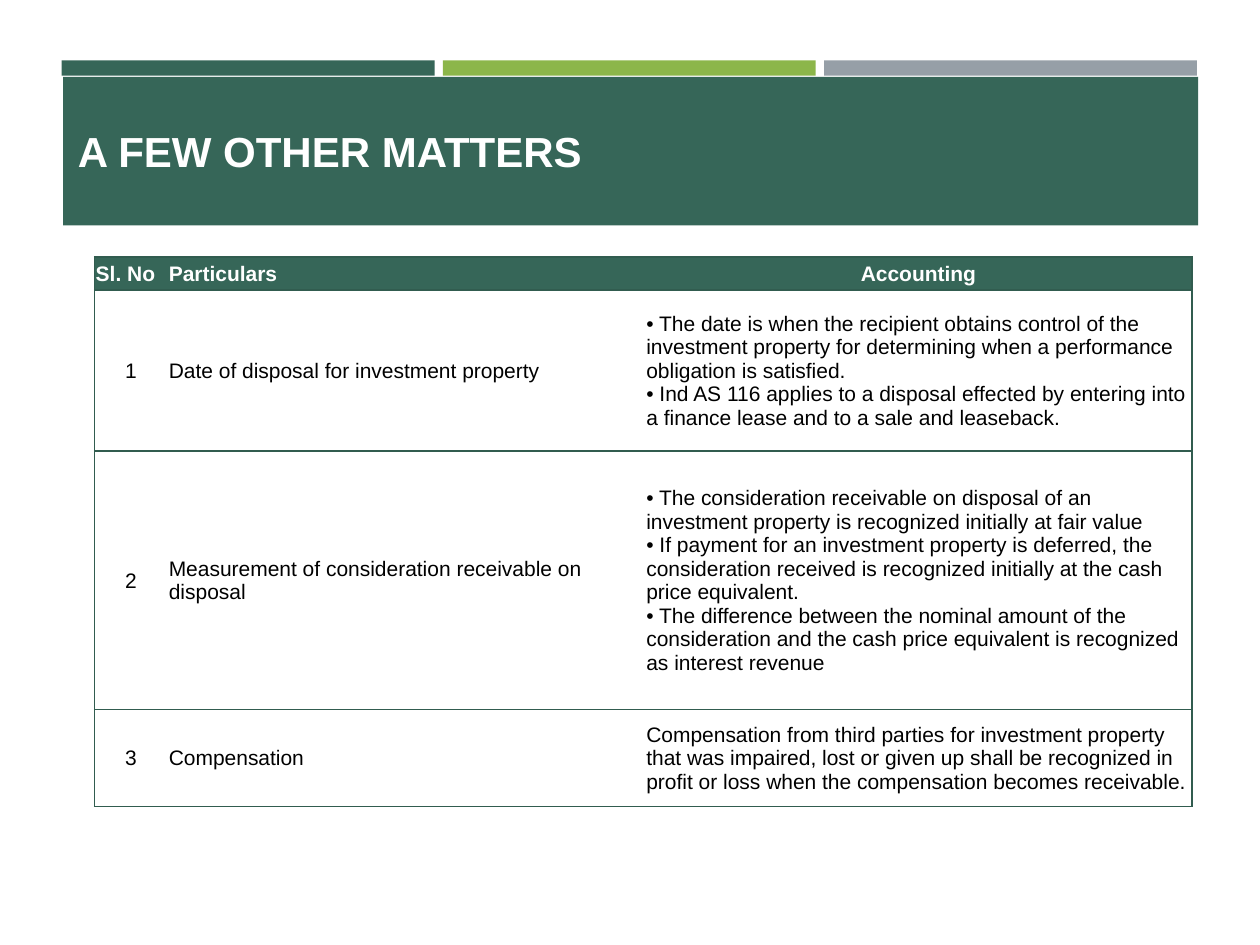
import lxml.etree
import pptx
import pptx.dml.color
import pptx.enum.shapes
import pptx.enum.text
import pptx.oxml.ns
import pptx.util

GREEN, LIME, GREY = "366658", "8CB64A", "969FA7"
BORDER, WHITE, BLACK = "315C4F", "FFFFFF", "000000"
LEFT = pptx.enum.text.PP_ALIGN.LEFT
CENTER = pptx.enum.text.PP_ALIGN.CENTER
MIDDLE = pptx.enum.text.MSO_ANCHOR.MIDDLE


def color(value):
    return pptx.dml.color.RGBColor.from_string(value)


def apply(target, values):
    for name, value in values.items():
        setattr(target, name, value)


class Deck:
    """Style and current slide; lengths are cells of a 100 x 75 grid."""

    font = "Arial"
    columns, rows = 100, 75

    def __init__(self, width, height):
        self.deck = pptx.Presentation()
        apply(self.deck, {"slide_width": pptx.util.Inches(width),
                          "slide_height": pptx.util.Inches(height)})
        self.slide = self.deck.slides.add_slide(self.deck.slide_layouts[6])

    def x(self, columns):
        return round(self.deck.slide_width * columns / self.columns)

    def y(self, rows):
        return round(self.deck.slide_height * rows / self.rows)

    def place(self, left, top, width, height):
        return self.x(left), self.y(top), self.x(width), self.y(height)

    def label(self, paragraph, text, size, ink, bold=False, align=LEFT):
        paragraph.text = text
        paragraph.alignment = align
        apply(paragraph.font, {"name": self.font, "bold": bold,
                               "size": pptx.util.Pt(size)})
        paragraph.font.color.rgb = color(ink)

    def bar(self, area, fill):
        bar = self.slide.shapes.add_shape(
            pptx.enum.shapes.MSO_SHAPE.RECTANGLE, *self.place(*area))
        bar.shadow.inherit = False
        bar.fill.solid()
        bar.fill.fore_color.rgb = color(fill)
        bar.line.fill.background()

    def title(self, area, text):
        frame = self.slide.shapes.add_textbox(*self.place(*area)).text_frame
        apply(frame, {"word_wrap": True, "vertical_anchor": MIDDLE})
        self.label(frame.paragraphs[0], text, 24, WHITE, bold=True)

    def borders(self, cell, drawn):
        properties = cell._tc.get_or_add_tcPr()
        for index, side in enumerate("LRTB"):
            line = lxml.etree.Element(pptx.oxml.ns.qn(f"a:ln{side}"), w="12700")
            properties.insert(index, line)
            if side in drawn:
                fill = lxml.etree.SubElement(line, pptx.oxml.ns.qn("a:solidFill"))
                lxml.etree.SubElement(fill, pptx.oxml.ns.qn("a:srgbClr"), val=BORDER)
            else:
                lxml.etree.SubElement(line, pptx.oxml.ns.qn("a:noFill"))

    def table(self, left, top, widths, heights, records):
        area = self.place(left, top, sum(widths), sum(heights))
        table = self.slide.shapes.add_table(len(heights), len(widths), *area).table
        for column, width in zip(table.columns, widths):
            column.width = self.x(width)
        for row, height in zip(table.rows, heights):
            row.height = self.y(height)
        inset = pptx.util.Inches(0.01)
        last = len(widths) - 1
        for r, record in enumerate(records):
            header = r == 0
            for c, text in enumerate(record):
                cell = table.cell(r, c)
                apply(cell, {"vertical_anchor": MIDDLE, "margin_left": inset,
                             "margin_right": inset, "margin_top": inset,
                             "margin_bottom": 0})
                cell.fill.solid()
                cell.fill.fore_color.rgb = color(GREEN if header else WHITE)
                # Header centres the last column, the body centres the first
                centered = c == (last if header else 0)
                self.label(cell.text_frame.paragraphs[0], text, 12,
                           WHITE if header else BLACK, bold=header,
                           align=CENTER if centered else LEFT)
                self.borders(cell, "TB" + "L" * (c == 0) + "R" * (c == last))


def lines(*points):
    """Bulleted points separated by line breaks."""
    return "\v".join("• " + point for point in points)


MATTERS = [
    ("Sl. No", "Particulars", "Accounting"),
    ("1", "Date of disposal for investment property", lines(
        "The date is when the recipient obtains control of the investment "
        "property for determining when a performance obligation is satisfied.",
        "Ind AS 116 applies to a disposal effected by entering into a finance "
        "lease and to a sale and leaseback.")),
    ("2", "Measurement of consideration receivable on disposal", lines(
        "The consideration receivable on disposal of an investment property "
        "is recognized initially at fair value",
        "If payment for an investment property is deferred, the consideration "
        "received is recognized initially at the cash price equivalent.",
        "The difference between the nominal amount of the consideration and "
        "the cash price equivalent is recognized as interest revenue")),
    ("3", "Compensation",
     "Compensation from third parties for investment property that was "
     "impaired, lost or given up shall be recognized in profit or loss when "
     "the compensation becomes receivable."),
]


def main():
    deck = Deck(10, 7.5)

    # Accent strips above the title band
    for index, fill in enumerate((GREEN, LIME, GREY)):
        deck.bar((4.9 + 30.25 * index, 4.8, 29.6, 1.2), fill)

    # Title band
    deck.bar((5, 6.1, 90.1, 11.8), GREEN)
    deck.title((5.2, 6.5, 67.9, 11), "A FEW OTHER MATTERS")

    # Table of matters
    deck.table(7.5, 20.4, (5.8, 37.9, 43.4), (2.6, 12.8, 20.5, 7.7), MATTERS)

    deck.deck.save("out.pptx")


if __name__ == "__main__":
    main()
